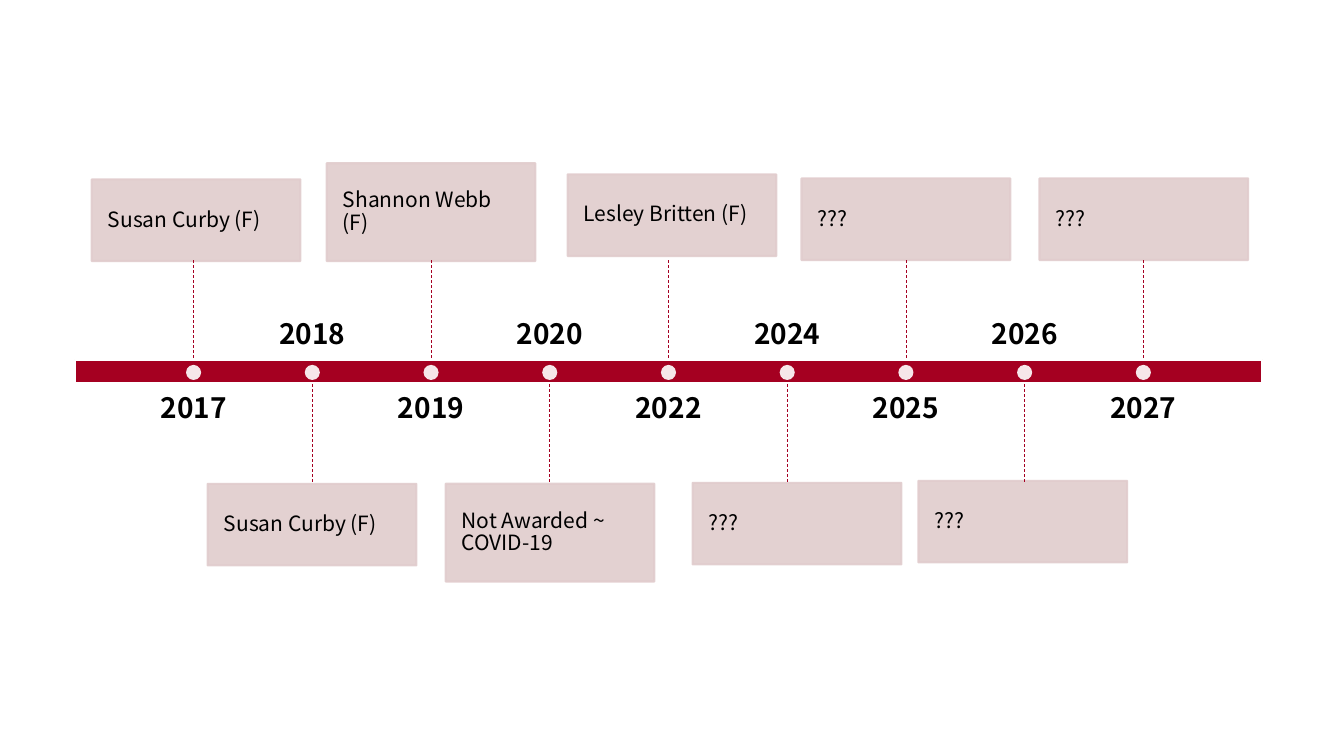
from pptx import Presentation
from pptx.dml.color import RGBColor
from pptx.enum.dml import MSO_LINE
from pptx.enum.shapes import MSO_CONNECTOR, MSO_SHAPE
from pptx.enum.text import MSO_ANCHOR, PP_ALIGN
from pptx.oxml.ns import qn
from pptx.util import Inches, Pt
from lxml import etree

RECT, OVAL = MSO_SHAPE.RECTANGLE, MSO_SHAPE.OVAL
STRAIGHT, DASH = MSO_CONNECTOR.STRAIGHT, MSO_LINE.DASH
TOP, MIDDLE, BOTTOM = MSO_ANCHOR.TOP, MSO_ANCHOR.MIDDLE, MSO_ANCHOR.BOTTOM
LEFT, CENTER = PP_ALIGN.LEFT, PP_ALIGN.CENTER

RED = RGBColor(0xA5, 0x00, 0x21)
ROSE = RGBColor(0xE1, 0xCC, 0xCD)
WHITE = RGBColor(0xFF, 0xFF, 0xFF)
BLACK = RGBColor(0x00, 0x00, 0x00)
FONT = "Noto Sans CJK JP"

# Year, winner, then the card's left, top and height
EVENTS = [
    ("2017", "Susan Curby (F)", 0.91, 1.78, 0.81),
    ("2018", "Susan Curby (F)", 2.06, 4.8, 0.81),
    ("2019", "Shannon Webb (F)", 3.24, 1.62, 0.97),
    ("2020", "Not Awarded ~ COVID-19", 4.42, 4.8, 0.97),
    ("2022", "Lesley Britten (F)", 5.63, 1.73, 0.81),
    ("2024", "???", 6.87, 4.79, 0.81),
    ("2025", "???", 7.95, 1.77, 0.81),
    ("2026", "???", 9.11, 4.77, 0.81),
    ("2027", "???", 10.31, 1.77, 0.81),
]
FIRST, LAST = 1.92, 11.34
STEP = (LAST - FIRST) / (len(EVENTS) - 1)
CARD_W, YEAR_W, YEAR_H, DOT = 2.07, 1.88, 0.66, 0.15


def add_block(slide, kind, left, top, width, height, fill, edge=None, alpha=100):
    shape = slide.shapes.add_shape(
        kind, Inches(left), Inches(top), Inches(width), Inches(height))
    shape.shadow.inherit = False
    shape.fill.solid()
    shape.fill.fore_color.rgb = fill
    if edge is None:
        shape.line.fill.background()
    else:
        shape.line.color.rgb = edge
        shape.line.width = Pt(1.5)
    if alpha < 100:
        for color in shape.element.spPr.iter(qn("a:srgbClr")):
            etree.SubElement(color, qn("a:alpha"), val=str(alpha * 1000))
    return shape


def write(shape, text, size, align, anchor, inset=0, bold=False):
    frame = shape.text_frame
    frame.word_wrap = True
    frame.vertical_anchor = anchor
    frame.margin_left = frame.margin_right = Inches(inset)
    frame.margin_top = frame.margin_bottom = Inches(inset)
    para = frame.paragraphs[0]
    para.alignment = align
    para.line_spacing = 0.9
    run = para.add_run()
    run.text = text
    run.font.name = FONT
    run.font.size = Pt(size)
    run.font.bold = bold
    run.font.color.rgb = BLACK


def add_year(slide, year, x, top, anchor):
    box = slide.shapes.add_textbox(
        Inches(x - YEAR_W / 2), Inches(top), Inches(YEAR_W), Inches(YEAR_H))
    write(box, year, 20, CENTER, anchor, bold=True)


def add_card(slide, name, left, top, height):
    card = add_block(slide, RECT, left, top, CARD_W, height, ROSE, ROSE, 90)
    write(card, name, 15, LEFT, MIDDLE, inset=0.16)


def add_stem(slide, x, start, end):
    stem = slide.shapes.add_connector(
        STRAIGHT, Inches(x), Inches(start), Inches(x), Inches(end))
    stem.line.color.rgb = RED
    stem.line.width = Pt(0.5)
    stem.line.dash_style = DASH
    etree.SubElement(stem.element.spPr, qn("a:effectLst"))


def main():
    deck = Presentation()
    deck.slide_width, deck.slide_height = Inches(13.33), Inches(7.5)
    slide = deck.slides.add_slide(deck.slide_layouts[6])

    # Time bar
    add_block(slide, RECT, 0.74, 3.57, 11.78, 0.23, RED, WHITE)

    # Events alternate above and below the bar
    for i, (year, name, left, top, height) in enumerate(EVENTS):
        x = FIRST + i * STEP
        add_card(slide, name, left, top, height)
        if i % 2 == 0:
            add_year(slide, year, x, 3.91, TOP)
            add_stem(slide, x, 2.58, 3.57)
        else:
            add_year(slide, year, x, 2.82, BOTTOM)
            add_stem(slide, x, 3.81, 4.8)
        add_block(slide, OVAL, x - DOT / 2, 3.62, DOT, DOT, WHITE, alpha=90)

    deck.save("out.pptx")


if __name__ == "__main__":
    main()
